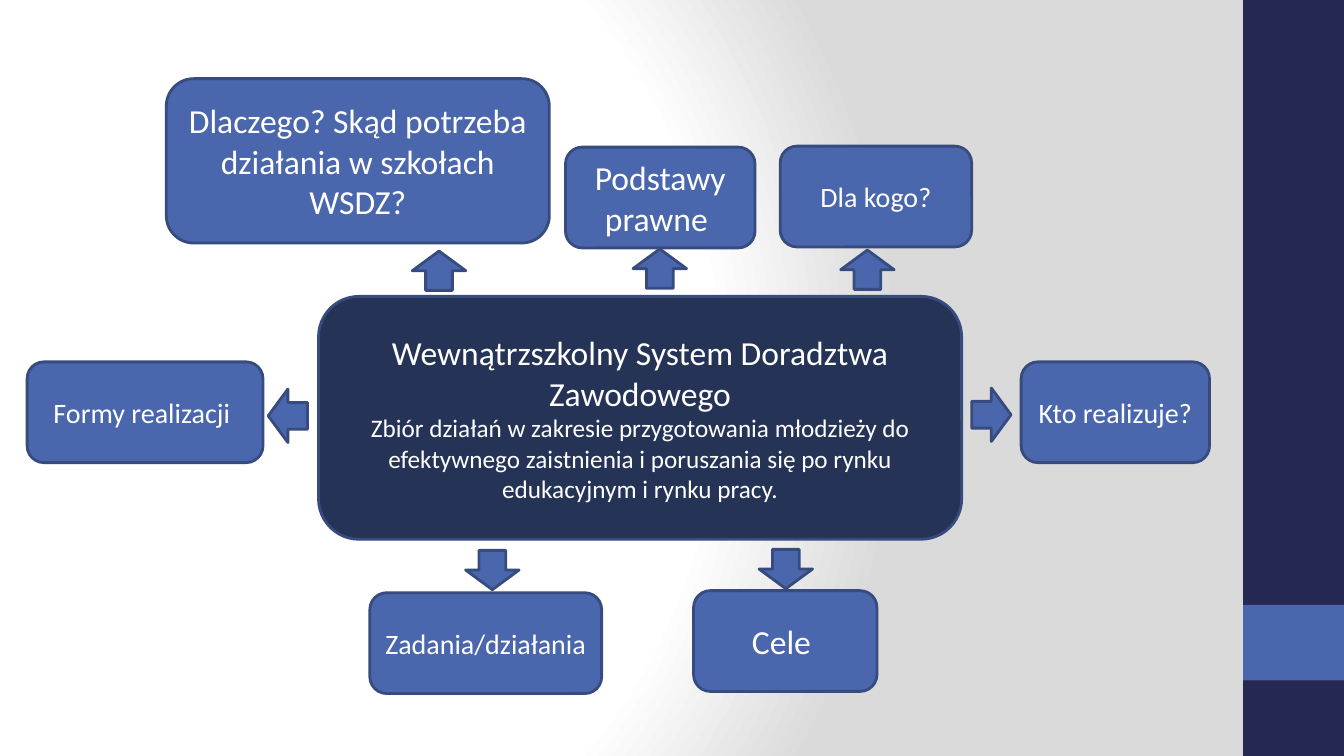
"""Build a slide mapping the questions around a school career guidance system."""
from pptx import Presentation
from pptx.dml.color import RGBColor
from pptx.enum import shapes, text
from pptx.oxml import parse_xml
from pptx.util import Pt

COLORS = {"white": "FFFFFF", "grey": "DADADA", "navy": "242852", "blue": "4A66AC",
          "dark": "253356", "edge": "374B7F"}
FONT = "Calibri"
SIZE = (960, 540)
BOX_H = 72
ARROW = (38.2, 28.1)

BANDS = [("navy", 0, 540), ("blue", 432, 54)]
BAND_X, BAND_W = 888, 72

CENTER = (227.5, 211.7, 459.4, 173.5)
CENTER_TEXT = [
    ("Wewnątrzszkolny System Doradztwa Zawodowego", 24),
    ("Zbiór działań w zakresie przygotowania młodzieży do efektywnego zaistnienia "
     "i poruszania się po rynku edukacyjnym i rynku pracy.", 18),
]
TOPICS = [
    ("Dlaczego? Skąd potrzeba działania w szkołach WSDZ?", 24, 118.8, 56.2, 273.6, 117.4),
    ("Podstawy prawne ", 24, 403.9, 105.1, 135.4, BOX_H),
    ("Dla kogo?", 20, 557.3, 104.4, 136.8, BOX_H),
    ("Kto realizuje?", 20, 729.4, 258.5, 134.6, BOX_H),
    ("Formy realizacji ", 20, 19.4, 258.5, 168.5, BOX_H),
    ("Zadania/działania", 20, 264.2, 423.4, 165.6, BOX_H),
    ("Cele ", 24, 495.4, 421.9, 131, BOX_H),
]
ARROWS = {
    0: [(332.6, 393.1), (542.2, 392.4)],
    90: [(186.5, 283)],
    180: [(294.5, 179.3), (452.2, 177.8), (600.5, 178.6)],
    270: [(689, 282.2)],
}
BACKGROUND = [(0, "white"), (75, "white"), (100, "grey")]


def rgb(name):
    return RGBColor.from_string(COLORS[name])


def add_background(s):
    stops = "".join(f'<a:gs pos="{pos * 1000}"><a:srgbClr val="{COLORS[c]}"/></a:gs>'
                    for pos, c in BACKGROUND)
    s._element.cSld.insert(0, parse_xml(
        '<p:bg xmlns:p="http://schemas.openxmlformats.org/presentationml/2006/main" '
        'xmlns:a="http://schemas.openxmlformats.org/drawingml/2006/main"><p:bgPr>'
        f'<a:gradFill rotWithShape="1"><a:gsLst>{stops}</a:gsLst><a:path path="circle">'
        '<a:fillToRect l="20000" t="50000" r="100000" b="50000"/></a:path></a:gradFill>'
        '<a:effectLst/></p:bgPr></p:bg>'))


def add_shape(s, kind, box, fill="blue", line="edge", rotation=0):
    sp = s.shapes.add_shape(kind, *map(Pt, box))
    sp.shadow.inherit = False
    sp.rotation = rotation
    sp.fill.solid()
    sp.fill.fore_color.rgb = rgb(fill)
    if line:
        sp.line.color.rgb = rgb(line)
        sp.line.width = Pt(2)
    else:
        sp.line.fill.background()
    return sp


def add_text(p, content, size=20, color="white", align=text.PP_ALIGN.CENTER):
    p.alignment = align
    r = p.add_run()
    r.text = content
    r.font.name = FONT
    r.font.size = Pt(size)
    r.font.color.rgb = rgb(color)


def add_box(s, box, lines, fill="blue"):
    tf = add_shape(s, shapes.MSO_SHAPE.ROUNDED_RECTANGLE, box, fill).text_frame
    tf.word_wrap = True
    tf.vertical_anchor = text.MSO_ANCHOR.MIDDLE
    for i, (content, size) in enumerate(lines):
        p = tf.add_paragraph() if i else tf.paragraphs[0]
        add_text(p, content, size=size)


def main():
    prs = Presentation()
    prs.slide_width, prs.slide_height = map(Pt, SIZE)
    s = prs.slides.add_slide(prs.slide_layouts[6])
    add_background(s)
    for fill, top, height in BANDS:
        add_shape(s, shapes.MSO_SHAPE.RECTANGLE, (BAND_X, top, BAND_W, height), fill, None)
    add_box(s, CENTER, CENTER_TEXT, "dark")
    for content, size, *box in TOPICS:
        add_box(s, box, [(content, size)])
    for rotation, corners in ARROWS.items():
        for corner in corners:
            add_shape(s, shapes.MSO_SHAPE.DOWN_ARROW, corner + ARROW, rotation=rotation)
    prs.save("out.pptx")


if __name__ == "__main__":
    main()
